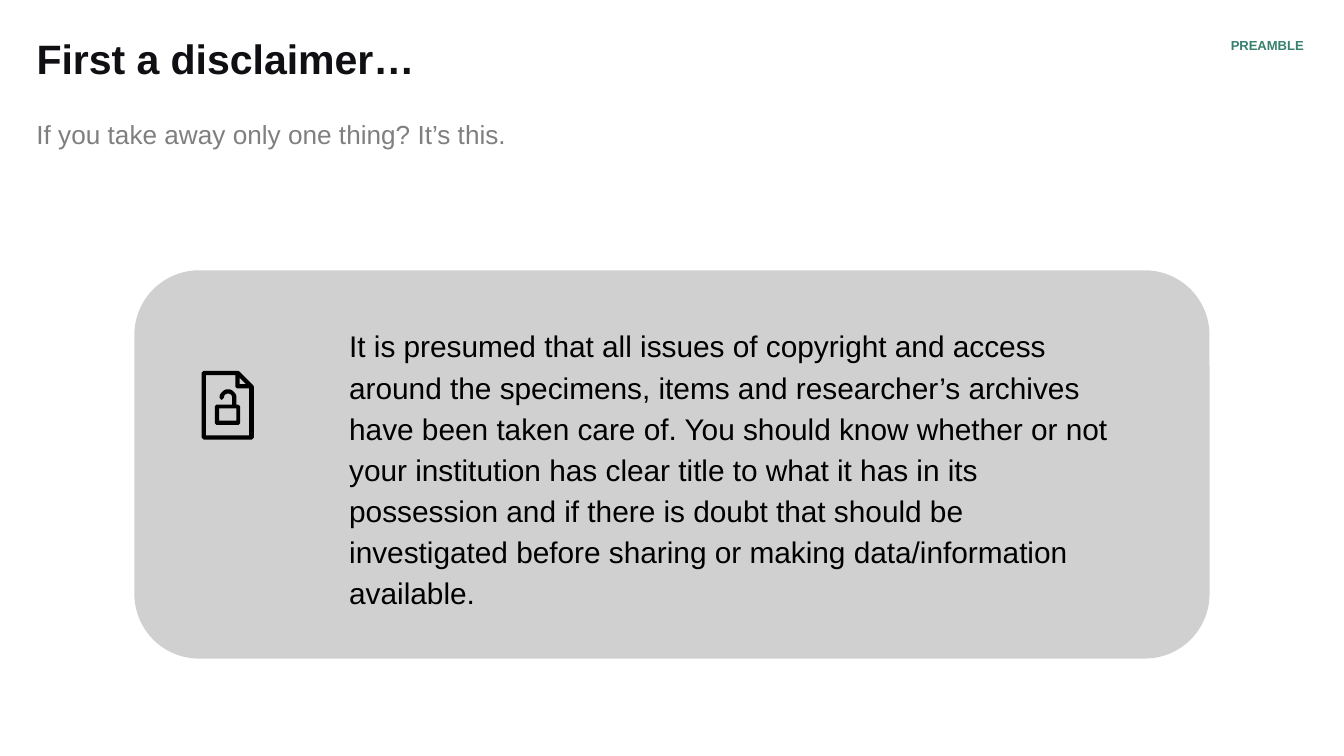
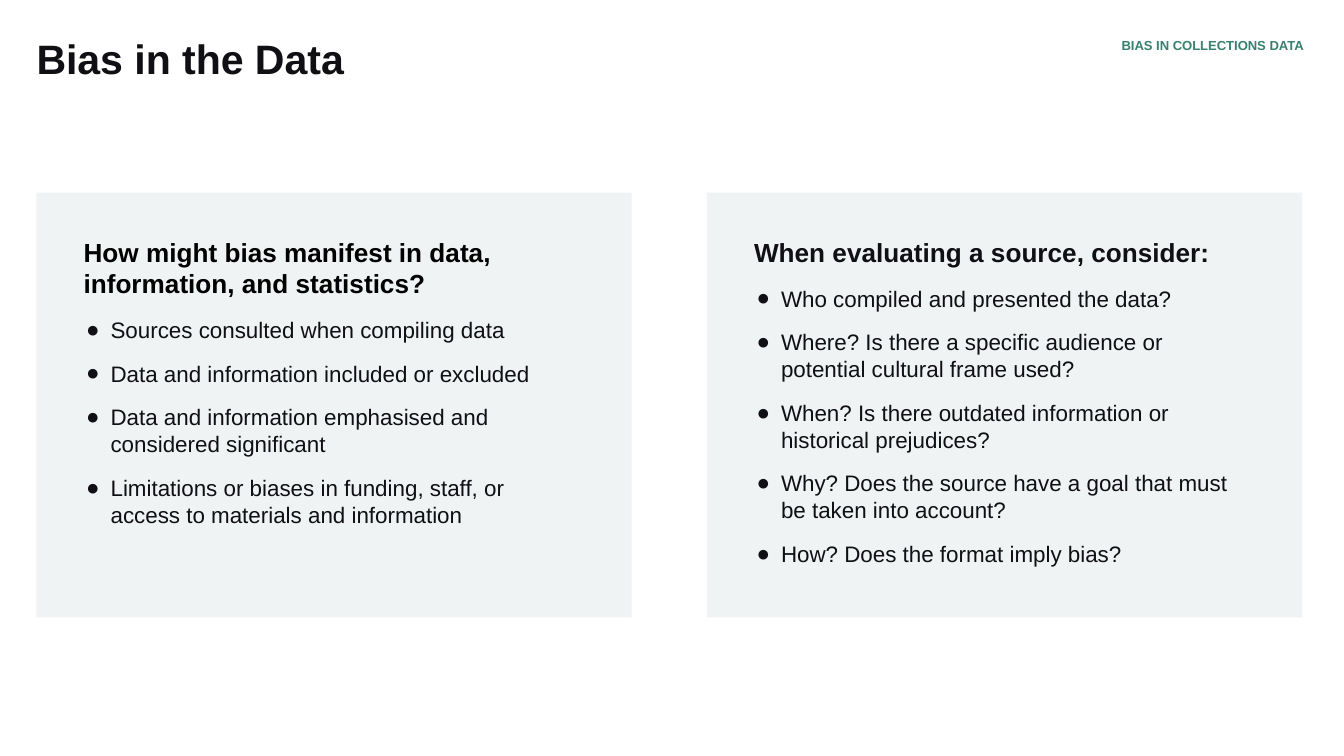
from math import cos, pi, sin

from lxml.etree import SubElement
from pptx import Presentation
from pptx.dml.color import RGBColor
from pptx.enum.shapes import MSO_SHAPE as SHAPE
from pptx.enum.text import MSO_ANCHOR as ANCHOR, MSO_AUTO_SIZE as AUTO, PP_ALIGN as ALIGN
from pptx.oxml.ns import qn
from pptx.util import Cm, Pt

FONT = "Arial"
INK = RGBColor(0x0F, 0x0F, 0x14)
BLACK = RGBColor(0x00, 0x00, 0x00)
GREEN = RGBColor(0x37, 0x81, 0x6E)
GREY = RGBColor(0x7F, 0x7F, 0x7F)
CARD_GREY = RGBColor(0xD0, 0xD0, 0xD0)
PANEL_GREY = RGBColor(0xF0, 0xF3, 0xF3)

TITLE_ONLY, TWO_CONTENT = 5, 3
MARGIN = 0.69
INSET = 0.25
ICON_UNIT = Cm(0.01)

QUESTIONS = [
    ("How might bias manifest in data, information, and statistics?", BLACK, [
        "Sources consulted when compiling data",
        "Data and information included or excluded",
        "Data and information emphasised and considered significant",
        "Limitations or biases in funding, staff, or access to materials and information",
    ]),
    ("When evaluating a source, consider:", INK, [
        "Who compiled and presented the data?",
        "Where? Is there a specific audience or potential cultural frame used?",
        "When? Is there outdated information or historical prejudices?",
        "Why? Does the source have a goal that must be taken into account?",
        "How? Does the format imply bias?",
    ]),
]


def place(sp, x, y, w, h):
    sp.left, sp.top, sp.width, sp.height = Cm(x), Cm(y), Cm(w), Cm(h)


def set_frame(sp, left=0, top=0, right=INSET, bottom=INSET, fit=AUTO.NONE):
    """Set wrapping, anchor and insets (cm); return the text frame."""
    tf = sp.text_frame
    tf.word_wrap = True
    tf.auto_size = fit
    tf.vertical_anchor = ANCHOR.TOP
    tf.margin_left, tf.margin_top = Cm(left), Cm(top)
    tf.margin_right, tf.margin_bottom = Cm(right), Cm(bottom)
    return tf


def add_run(p, text, size, color, bold=False):
    r = p.add_run()
    r.text = text
    r.font.name, r.font.size, r.font.bold = FONT, Pt(size), bold
    r.font.color.rgb = color


def style_solid(sp, color):
    sp.shadow.inherit = False
    sp.fill.solid()
    sp.fill.fore_color.rgb = color
    sp.line.fill.background()


def add_header(s, title, section):
    sp = s.shapes.title
    place(sp, MARGIN, 0.74, 20.3, 1.5)
    p = set_frame(sp).paragraphs[0]
    p.alignment, p.line_spacing = ALIGN.LEFT, 0.9
    add_run(p, title, 22, INK, True)

    tag = s.shapes.add_textbox(Cm(19.23), Cm(0.74), Cm(5.41), Cm(0.41))
    p = set_frame(tag, right=0).paragraphs[0]
    p.alignment, p.line_spacing = ALIGN.RIGHT, 0.9
    add_run(p, section, 7, GREEN, True)


def draw_outline(shapes, contours, x, y):
    """Fill closed contours, given in icon units, as one black freeform."""
    (start, *rest), *holes = contours
    fb = shapes.build_freeform(*start, scale=ICON_UNIT)
    fb.add_line_segments(rest)
    for first, *others in holes:
        fb.move_to(*first)
        fb.add_line_segments(others)
    style_solid(fb.convert_to_shape(Cm(x), Cm(y)), BLACK)


def arc(cx, cy, radius, steps=16):
    """Points of an upper half circle, from right to left."""
    angles = [pi * i / steps for i in range(steps + 1)]
    return [(cx + radius * cos(a), cy - radius * sin(a)) for a in angles]


def draw_unlocked_page(s, x, y):
    shapes = s.shapes.add_group_shape().shapes
    page = [(4, 0), (68, 0), (71, 1), (98, 28), (99, 31), (99, 126),
            (95, 130), (4, 130), (0, 126), (0, 4)]
    fold = [(72, 13), (84, 25), (72, 25)]
    sheet = [(8, 122), (8, 8), (64, 8), (64, 30), (67, 33), (90, 33), (90, 122)]
    draw_outline(shapes, [page, fold, sheet], x, y)

    shackle = [*arc(50, 51, 16), (38, 55), (42, 51), *arc(50, 51, 8)[::-1]]
    lock = [(69, 64), (66, 64), *shackle, (58, 64), (28, 64), (25, 67), (25, 99),
            (28, 102), (70, 102), (73, 99), (73, 67)]
    keyhole = [(66, 94), (33, 94), (33, 71), (66, 71)]
    draw_outline(shapes, [lock, keyhole], x, y)


def add_disclaimer_card(s, x, y, w, h):
    card = s.shapes.add_shape(SHAPE.ROUNDED_RECTANGLE, Cm(x), Cm(y), Cm(w), Cm(h))
    style_solid(card, CARD_GREY)
    box = s.shapes.add_textbox(Cm(x + 3.81), Cm(y + 0.99), Cm(w - 5.08), Cm(5.41))
    p = set_frame(box, left=INSET, bottom=0, fit=AUTO.SHAPE_TO_FIT_TEXT).paragraphs[0]
    p.line_spacing = 1.15
    add_run(p, "It is presumed that all issues of copyright and access around the specimens, "
               "items and researcher’s archives have been taken care of. You should know "
               "whether or not your institution has clear title to what it has in its "
               "possession and if there is doubt that should be investigated before sharing "
               "or making data/information available.", 16, BLACK)
    draw_unlocked_page(s, x + 1.27, y + 1.9)


def set_bullet(p, char=None):
    """Give a paragraph a hanging bullet, or none."""
    pPr = p._p.get_or_add_pPr()
    pPr.set("marL", str(Cm(0.51) if char else 0))
    pPr.set("indent", str(Cm(-0.46) if char else 0))
    if not char:
        SubElement(pPr, qn("a:buNone"))
        return
    color = SubElement(pPr, qn("a:buClr"))
    SubElement(color, qn("a:srgbClr"), val=str(INK))
    SubElement(pPr, qn("a:buFont"), typeface=FONT)
    SubElement(pPr, qn("a:buChar"), char=char)


def add_question_panel(s, body, x, y, w, h, heading, color, items):
    panel = s.shapes.add_shape(SHAPE.RECTANGLE, Cm(x), Cm(y), Cm(w), Cm(h))
    style_solid(panel, PANEL_GREY)
    body.element.getparent().append(body.element)  # list goes in front of its panel
    place(body, x + 0.89, y + 0.58, w - 1.8, h - 1.2)
    tf = set_frame(body, top=INSET)
    p = tf.paragraphs[0]
    set_bullet(p)
    p.space_before = Pt(0)
    add_run(p, heading, 14, color, True)
    for item in items:
        p = tf.add_paragraph()
        set_bullet(p, "●")
        p.space_before = Pt(9)
        add_run(p, item, 12, INK)
    p.space_after = Pt(9)


def build_disclaimer(prs):
    s = prs.slides.add_slide(prs.slide_layouts[TITLE_ONLY])
    add_disclaimer_card(s, 2.54, 5.11, 20.32, 7.34)
    add_header(s, "First a disclaimer…", "PREAMBLE")
    box = s.shapes.add_textbox(Cm(MARGIN), Cm(2.24), Cm(18), Cm(1.2))
    p = set_frame(box).paragraphs[0]
    add_run(p, "If you take away only one thing? It’s this.", 14, GREY)


def build_bias(prs):
    s = prs.slides.add_slide(prs.slide_layouts[TWO_CONTENT])
    add_header(s, "Bias in the Data", "BIAS IN COLLECTIONS DATA")
    width, gap = 11.25, 1.42
    bodies = [s.placeholders[1], s.placeholders[2]]
    for i, (body, question) in enumerate(zip(bodies, QUESTIONS)):
        add_question_panel(s, body, MARGIN + i * (width + gap), 3.64, width, 8.03, *question)


def main():
    prs = Presentation()
    prs.slide_width, prs.slide_height = Cm(25.4), Cm(14.29)
    build_disclaimer(prs)
    build_bias(prs)
    prs.save("out.pptx")


if __name__ == "__main__":
    main()
